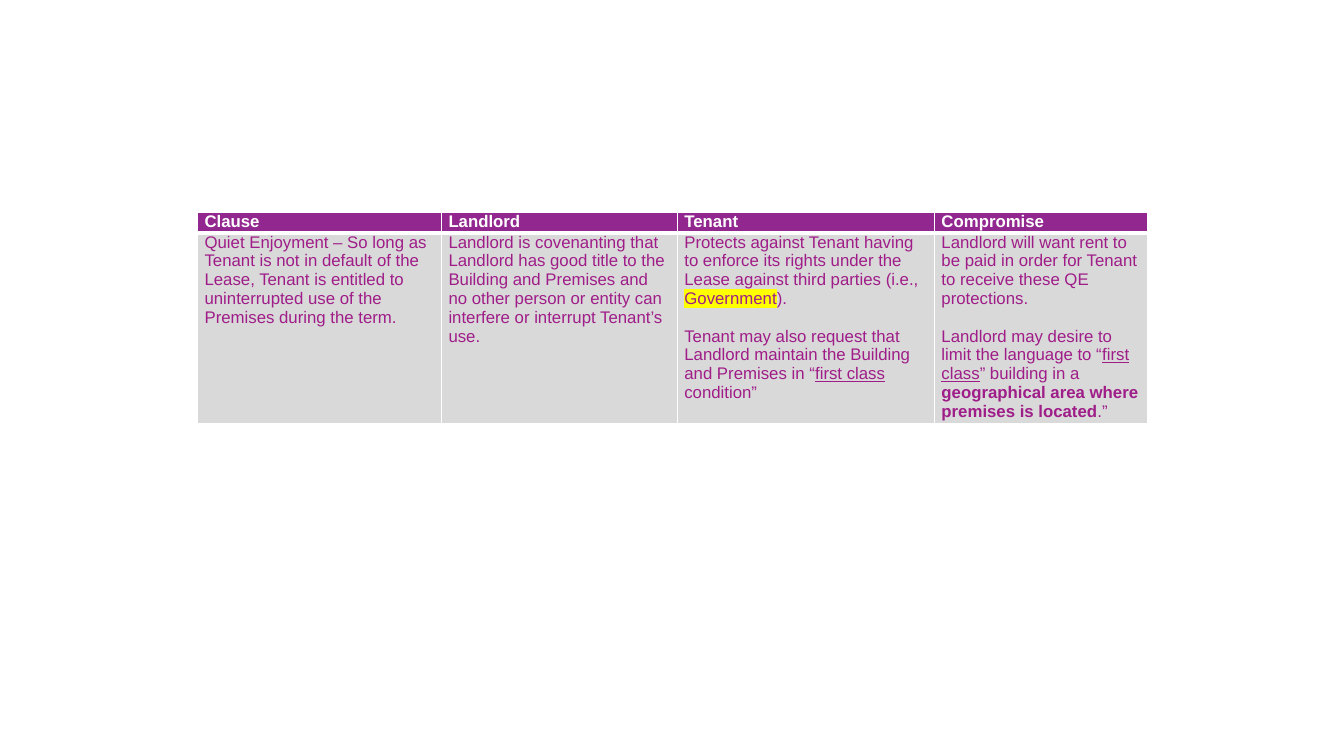
from dataclasses import dataclass

from lxml import etree
from pptx import Presentation
from pptx.dml.color import RGBColor
from pptx.enum.text import MSO_ANCHOR, PP_ALIGN
from pptx.oxml.ns import qn
from pptx.util import Inches, Pt

TOP = MSO_ANCHOR.TOP
LEFT = PP_ALIGN.LEFT
BLANK_LAYOUT = 6


@dataclass(frozen=True)
class Theme:
    font: str = "Arial"
    size: float = 12
    paragraph_gap: float = 13.4
    header_fill: str = "92278F"
    header_text: str = "FFFFFF"
    body_fill: str = "D9D9D9"
    body_text: str = "9F1D88"
    border: str = "FFFFFF"
    marker: str = "FFFF00"
    thin: float = 1
    thick: float = 3


BOLD = {"bold": True}
UNDERLINE = {"underline": True}
MARKED = {"marked": True}

# A cell is a list of paragraphs, a paragraph a list of (text, format) spans.
HEADINGS = ["Clause", "Landlord", "Tenant", "Compromise"]
QUIET_ENJOYMENT = [
    [[("Quiet Enjoyment – So long as Tenant is not in default of the Lease, Tenant is "
       "entitled to uninterrupted use of the Premises during the term.", {})]],
    [[("Landlord is covenanting that Landlord has good title to the Building and Premises "
       "and no other person or entity can interfere or interrupt Tenant’s use.", {})]],
    [
        [("Protects against Tenant having to enforce its rights under the Lease against "
          "third parties (i.e., ", {}), ("Government", MARKED), (").", {})],
        [("Tenant may also request that Landlord maintain the Building and Premises in “", {}),
         ("first class ", UNDERLINE), ("condition”", {})],
    ],
    [
        [("Landlord will want rent to be paid in order for Tenant to receive these QE "
          "protections.", {})],
        [("Landlord may desire to limit the language to “", {}), ("first class", UNDERLINE),
         ("” building in a ", {}), ("geographical area where premises is located", BOLD),
         (".”", {})],
    ],
]


class SlideBuilder:
    def __init__(self, deck, theme):
        self.deck = deck
        self.theme = theme
        self.page = deck.slides.add_slide(deck.slide_layouts[BLANK_LAYOUT])

    def across(self, percent):
        return round(self.deck.slide_width * percent / 100)

    def down(self, percent):
        return round(self.deck.slide_height * percent / 100)

    def table(self, left, top, widths, heights, rows):
        """Place a table; all lengths are percentages of the slide's size."""
        table = self.page.shapes.add_table(
            len(rows), len(widths), self.across(left), self.down(top),
            self.across(sum(widths)), self.down(sum(heights))).table
        table.horz_banding = False
        for column, width in zip(table.columns, widths):
            column.width = self.across(width)
        for row, height in zip(table.rows, heights):
            row.height = self.down(height)
        for row_number, contents in enumerate(rows):
            for column_number, paragraphs in enumerate(contents):
                self.cell(table.cell(row_number, column_number), paragraphs, row_number == 0)

    def cell(self, cell, paragraphs, is_header):
        theme = self.theme
        layout = {"margin_left": Inches(0.07), "margin_right": Inches(0.07),
                  "margin_top": 0, "margin_bottom": 0, "vertical_anchor": TOP}
        for name, value in layout.items():
            setattr(cell, name, value)
        self.borders(cell, is_header)
        cell.fill.solid()
        cell.fill.fore_color.rgb = RGBColor.from_string(
            theme.header_fill if is_header else theme.body_fill)
        color = theme.header_text if is_header else theme.body_text
        for number, spans in enumerate(paragraphs):
            para = cell.text_frame.paragraphs[0] if number == 0 else cell.text_frame.add_paragraph()
            para.alignment = LEFT
            if number:
                para.space_before = Pt(theme.paragraph_gap)
            for text, style in spans:
                self.span(para, text, color, **style)

    def span(self, para, text, color, marked=False, **style):
        span = para.add_run()
        span.text = text
        formats = {"name": self.theme.font, "size": Pt(self.theme.size),
                   "bold": False, "underline": False, **style}
        for name, value in formats.items():
            setattr(span.font, name, value)
        span.font.color.rgb = RGBColor.from_string(color)
        if marked:
            highlight = etree.Element(qn("a:highlight"))
            etree.SubElement(highlight, qn("a:srgbClr"), val=self.theme.marker)
            span.font.fill  # the highlight must directly follow the text fill
            para.runs[-1]._r.rPr.find(qn("a:solidFill")).addnext(highlight)

    def borders(self, cell, is_header):
        """Draw thin edges, with a thick rule between header and body."""
        theme = self.theme
        rule_edge = "lnB" if is_header else "lnT"
        properties = cell._tc.get_or_add_tcPr()
        for edge in ("lnL", "lnR", "lnT", "lnB"):
            width = theme.thick if edge == rule_edge else theme.thin
            line = etree.SubElement(properties, qn(f"a:{edge}"), w=str(Pt(width)))
            fill = etree.SubElement(line, qn("a:solidFill"))
            etree.SubElement(fill, qn("a:srgbClr"), val=theme.border)


def main():
    deck = Presentation()
    deck.slide_width, deck.slide_height = Inches(13.33), Inches(7.5)
    header = [[[(heading, BOLD)]] for heading in HEADINGS]
    SlideBuilder(deck, Theme()).table(
        left=14.7, top=28.13, widths=[18.15, 17.55, 19.13, 15.83], heights=[2.67, 25.2],
        rows=[header, QUIET_ENJOYMENT])
    deck.save("out.pptx")


if __name__ == "__main__":
    main()
